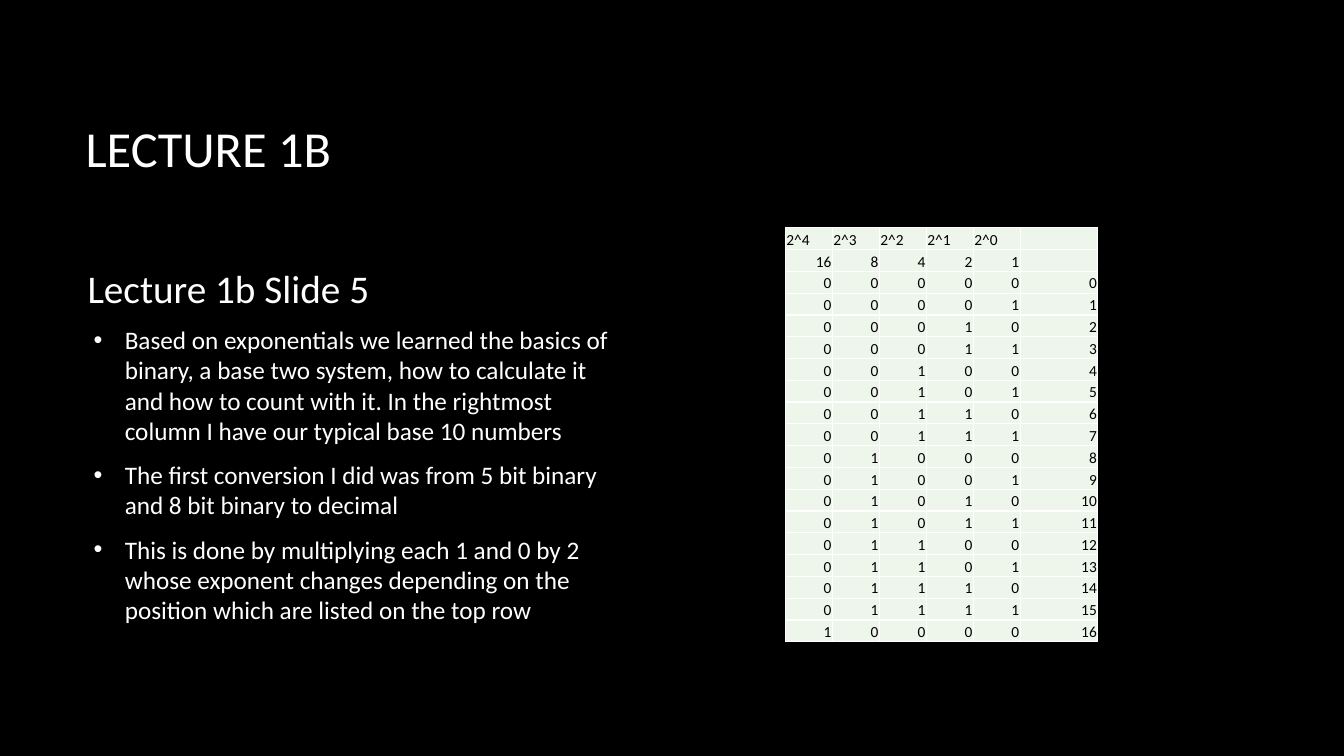
from pptx import Presentation
from pptx.dml.color import RGBColor
from pptx.enum.text import MSO_ANCHOR as Anchor, PP_ALIGN as Align
from pptx.oxml import parse_xml
from pptx.oxml.ns import nsdecls
from pptx.util import Inches, Pt

COLORS = {"background": "000000", "text": "FFFFFF", "cell": "EEF6EB",
          "cell_text": "000000", "border": "FFFFFF"}
BITS = 5
LAST_NUMBER = 16


class LectureSlide:
    font_name = "Calibri"

    def __init__(self, presentation):
        self.slide = presentation.slides.add_slide(presentation.slide_layouts[6])
        fill = self.slide.background.fill
        fill.solid()
        fill.fore_color.rgb = self.color("background")

    def color(self, name):
        return RGBColor.from_string(COLORS[name])

    def style(self, paragraph, size, color="text"):
        paragraph.font.name = self.font_name
        paragraph.font.size = Pt(size)
        paragraph.font.color.rgb = self.color(color)

    def text(self, box, lines, size, anchor=Anchor.TOP, space_after=0, bullets=False):
        shape = self.slide.shapes.add_textbox(*map(Inches, box))
        frame = shape.text_frame
        frame.word_wrap = True
        frame.vertical_anchor = anchor
        frame.text = "\n".join(lines)
        for paragraph in frame.paragraphs:
            paragraph.space_after = Pt(space_after)
            if bullets:
                self.bullet(paragraph)
            self.style(paragraph, size)

    def bullet(self, paragraph):
        properties = paragraph._p.get_or_add_pPr()
        properties.set("marL", str(Inches(0.31)))
        properties.set("indent", str(-Inches(0.31)))
        properties.append(parse_xml(f'<a:buFont {nsdecls("a")} typeface="Arial"/>'))
        properties.append(parse_xml(f'<a:buChar {nsdecls("a")} char="•"/>'))

    def table(self, box, rows, widths):
        shape = self.slide.shapes.add_table(len(rows), len(widths), *map(Inches, box))
        table = shape.table
        table.first_row = table.horz_banding = False
        for column, width in zip(table.columns, widths):
            column.width = Inches(width)
        for row_index, row in enumerate(rows):
            for column_index, value in enumerate(row):
                align = Align.LEFT if row_index == 0 else Align.RIGHT
                self.cell(table.cell(row_index, column_index), value, align)

    def cell(self, cell, value, align):
        cell.margin_left = cell.margin_right = cell.margin_top = Inches(0.01)
        cell.margin_bottom = 0
        cell.vertical_anchor = Anchor.BOTTOM
        cell.text = str(value)
        paragraph = cell.text_frame.paragraphs[0]
        paragraph.alignment = align
        self.style(paragraph, 11, "cell_text")
        # Borders come before the fill in the cell properties
        for side in ("lnL", "lnR", "lnT", "lnB"):
            cell._tc.get_or_add_tcPr().append(parse_xml(
                f'<a:{side} {nsdecls("a")} w="{Pt(1)}"><a:solidFill>'
                f'<a:srgbClr val="{COLORS["border"]}"/></a:solidFill></a:{side}>'))
        cell.fill.solid()
        cell.fill.fore_color.rgb = self.color("cell")


def main():
    presentation = Presentation()
    presentation.slide_width = Inches(13.33)
    presentation.slide_height = Inches(7.5)
    lecture = LectureSlide(presentation)

    # Headings
    lecture.text((0.75, 0.67, 11.08, 1.59), ["LECTURE 1B"], 36, Anchor.MIDDLE)
    lecture.text((0.77, 2.51, 5.16, 0.63), ["Lecture 1b Slide 5"], 28,
                 Anchor.BOTTOM, space_after=10)

    # Explanation
    lecture.text((0.83, 3.17, 5.46, 3.19), [
        "Based on exponentials we learned the basics of binary, a base two system, "
        "how to calculate it and how to count with it. In the rightmost column "
        "I have our typical base 10 numbers",
        "The first conversion I did was from 5 bit binary and 8 bit binary to decimal",
        "This is done by multiplying each 1 and 0 by 2 whose exponent changes "
        "depending on the position which are listed on the top row",
    ], 18, space_after=10, bullets=True)

    # Binary counting table: powers, place values, then each number
    exponents = range(BITS - 1, -1, -1)
    rows = [[f"2^{exponent}" for exponent in exponents] + [""],
            [2 ** exponent for exponent in exponents] + [""]]
    rows += [[*f"{number:0{BITS}b}", number] for number in range(LAST_NUMBER + 1)]
    table_width, decimal_width = 3.1, 0.77
    bit_width = (table_width - decimal_width) / BITS
    lecture.table((7.79, 2.26, table_width, 4.11), rows,
                  [bit_width] * BITS + [decimal_width])

    presentation.save("out.pptx")


if __name__ == "__main__":
    main()
